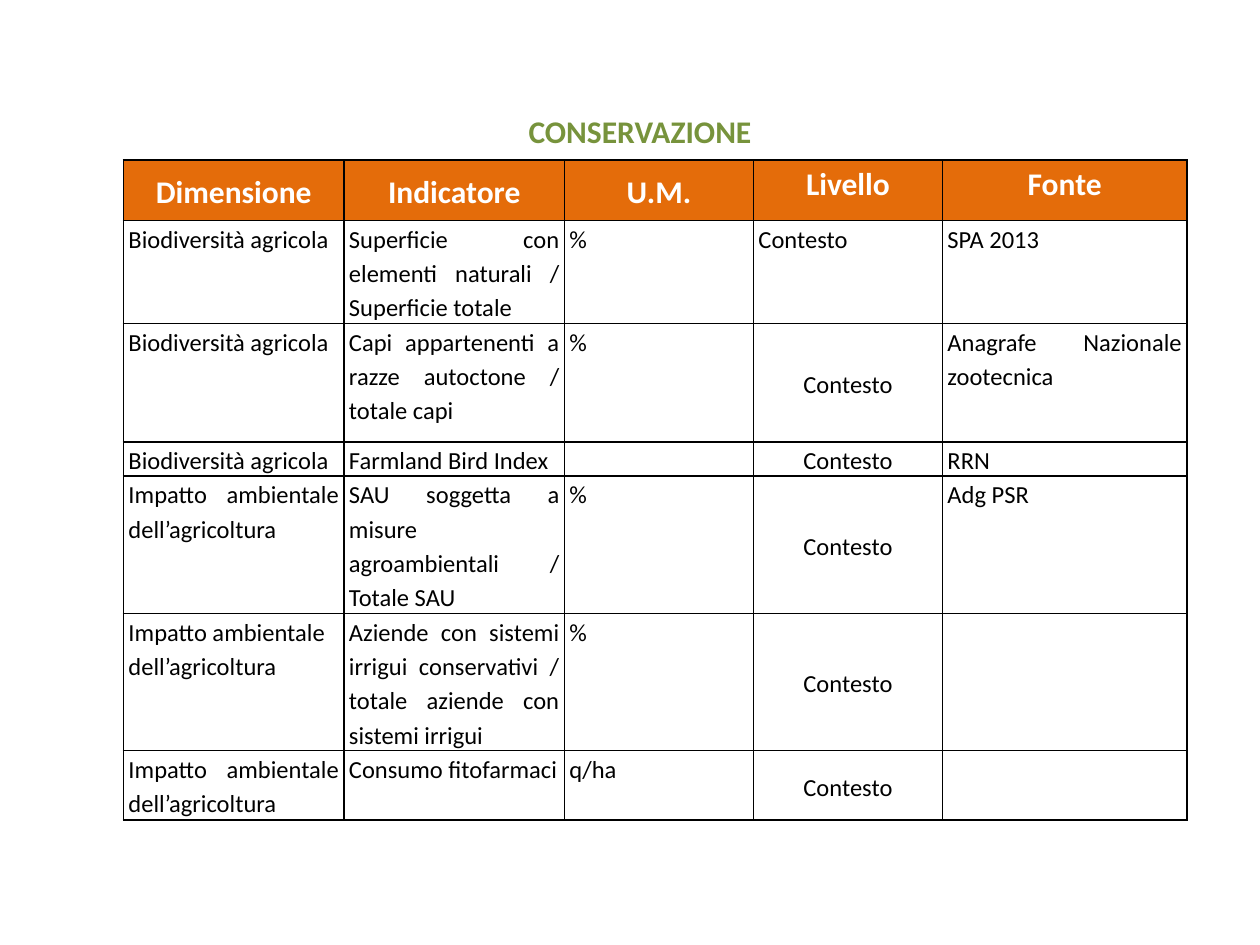
from dataclasses import dataclass

from lxml.etree import SubElement
from pptx import Presentation
from pptx.dml.color import RGBColor
from pptx.enum.text import MSO_ANCHOR, PP_ALIGN
from pptx.oxml.ns import qn
from pptx.util import Inches, Pt


@dataclass(frozen=True)
class Theme:
    font: str = "Calibri"
    heading_size: int = 18
    body_size: int = 14
    title: str = "77933C"
    header_fill: str = "E46C0A"
    header_text: str = "FFFFFF"
    body_text: str = "000000"
    border: str = "000000"
    line_spacing: float = 1.15


THEME = Theme()
LEFT, CENTER, JUSTIFY = PP_ALIGN.LEFT, PP_ALIGN.CENTER, PP_ALIGN.JUSTIFY

COLUMN_WIDTHS = [1.75, 1.75, 1.5, 1.5, 1.94]
ROW_HEIGHTS = [0.48, 0.81, 0.94, 0.27, 1.09, 1.09, 0.55]
HEADERS = ["Dimensione", "Indicatore", "U.M.", "Livello", "Fonte"]
BIODIVERSITY = "Biodiversità agricola"
IMPACT = "Impatto ambientale dell’agricoltura"
INDICATORS = [
    [BIODIVERSITY, "Superficie con elementi naturali / Superficie totale", "%", "Contesto", "SPA 2013"],
    [BIODIVERSITY, "Capi appartenenti a razze autoctone / totale capi", "%", "Contesto",
     "Anagrafe Nazionale zootecnica"],
    [BIODIVERSITY, "Farmland Bird Index", "", "Contesto", "RRN"],
    [IMPACT, "SAU soggetta a misure agroambientali / Totale SAU", "%", "Contesto", "Adg PSR"],
    [IMPACT, "Aziende con sistemi irrigui conservativi / totale aziende con sistemi irrigui",
     "%", "Contesto", ""],
    [IMPACT, "Consumo fitofarmaci", "q/ha", "Contesto", ""],
]
LEFT_ALIGNED_ROWS = {1, 2, 3, 5}  # first column only
LEVEL_COLUMN = 3


def set_attributes(target, values):
    for name, value in values.items():
        setattr(target, name, value)


def write(p, text, size, color, bold, align):
    p.alignment = align
    if not text:
        # The end mark keeps an empty cell from growing its row
        p._p.get_or_add_endParaRPr().set("sz", str(size * 100))
        return
    r = p.add_run()
    r.text = text
    set_attributes(r.font, {"name": THEME.font, "size": Pt(size), "bold": bold})
    r.font.color.rgb = RGBColor.from_string(color)


def add_title(s, text):
    box = s.shapes.add_textbox(Inches(2.56), Inches(0.84), Inches(5.04), Inches(0.4))
    tf = box.text_frame
    tf.word_wrap = True
    write(tf.paragraphs[0], text, THEME.heading_size, THEME.title, True, CENTER)


def add_borders(cell):
    tc_pr = cell._tc.get_or_add_tcPr()
    for side in ("a:lnL", "a:lnR", "a:lnT", "a:lnB"):
        line = SubElement(tc_pr, qn(side), w=str(Pt(1)))
        fill = SubElement(line, qn("a:solidFill"))
        SubElement(fill, qn("a:srgbClr"), val=THEME.border)


def format_cell(cell, inset, anchor):
    add_borders(cell)
    set_attributes(cell, {
        "margin_left": Inches(inset), "margin_right": Inches(inset),
        "margin_top": 0, "margin_bottom": 0, "vertical_anchor": anchor,
    })
    p = cell.text_frame.paragraphs[0]
    p.line_spacing = THEME.line_spacing
    return p


def add_header_cell(cell, text, column):
    anchor = MSO_ANCHOR.MIDDLE if column < LEVEL_COLUMN else MSO_ANCHOR.TOP
    p = format_cell(cell, 0.05, anchor)
    cell.fill.solid()
    cell.fill.fore_color.rgb = RGBColor.from_string(THEME.header_fill)
    write(p, text, THEME.heading_size, THEME.header_text, True, CENTER)


def add_body_cell(cell, text, row, column):
    # The level is centred in every row but the first
    centered = column == LEVEL_COLUMN and row > 1
    p = format_cell(cell, 0.04, MSO_ANCHOR.MIDDLE if centered else MSO_ANCHOR.TOP)
    cell.fill.background()
    if centered:
        align = CENTER
    elif column == 0 and row in LEFT_ALIGNED_ROWS:
        align = LEFT
    else:
        align = JUSTIFY
    write(p, text, THEME.body_size, THEME.body_text, False, align)


def add_indicator_table(s):
    frame = s.shapes.add_table(
        len(ROW_HEIGHTS), len(COLUMN_WIDTHS), Inches(0.98), Inches(1.27),
        Inches(sum(COLUMN_WIDTHS)), Inches(sum(ROW_HEIGHTS)))
    table = frame.table
    set_attributes(table, {"first_row": False, "horz_banding": False})
    for column, width in zip(table.columns, COLUMN_WIDTHS):
        column.width = Inches(width)
    for row, height in zip(table.rows, ROW_HEIGHTS):
        row.height = Inches(height)
    for j, text in enumerate(HEADERS):
        add_header_cell(table.cell(0, j), text, j)
    for i, values in enumerate(INDICATORS, start=1):
        for j, text in enumerate(values):
            add_body_cell(table.cell(i, j), text, i, j)


def main():
    prs = Presentation()
    set_attributes(prs, {"slide_width": Inches(10), "slide_height": Inches(7.5)})
    s = prs.slides.add_slide(prs.slide_layouts[6])
    add_indicator_table(s)
    add_title(s, "CONSERVAZIONE")
    prs.save("out.pptx")


if __name__ == "__main__":
    main()
